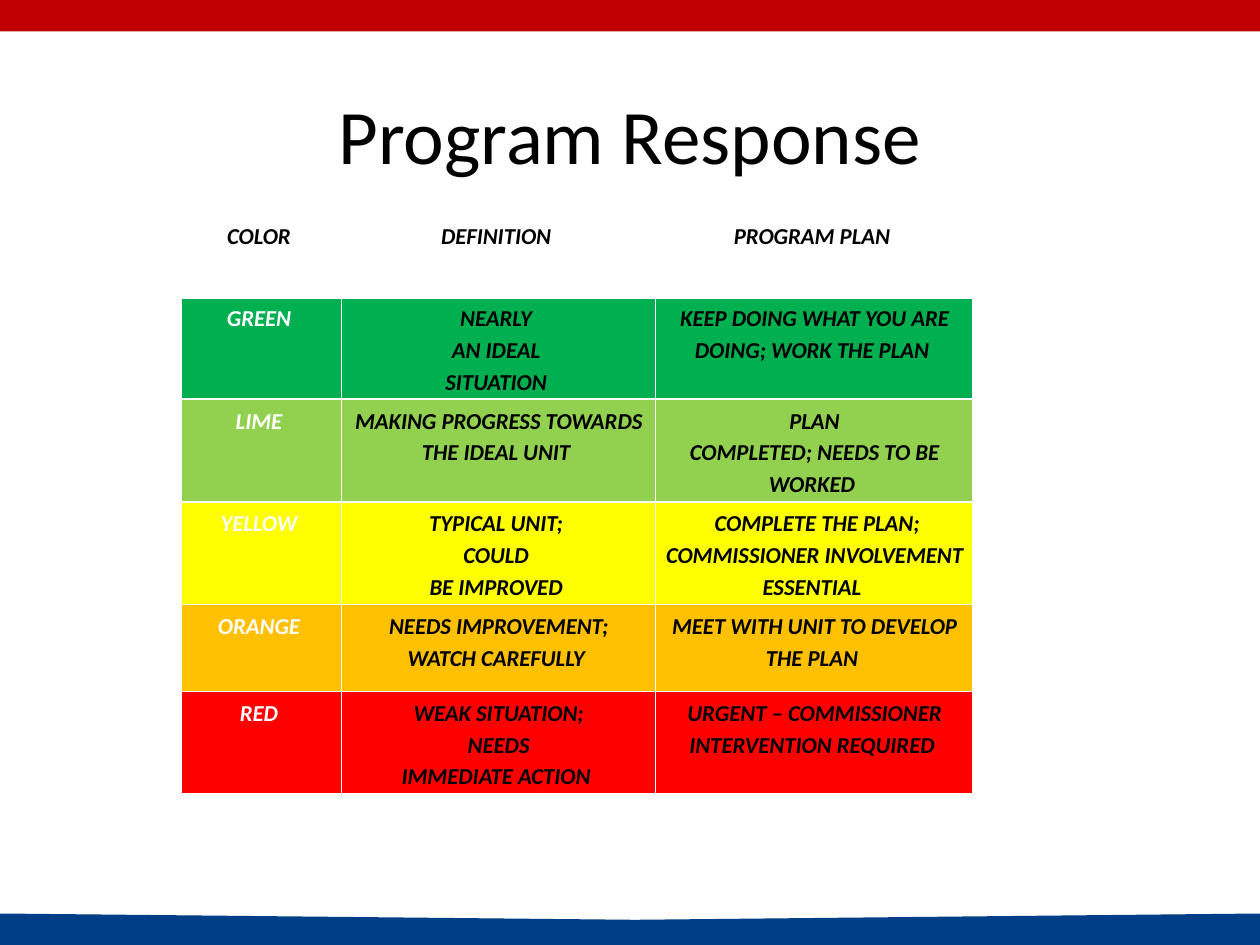
from lxml.etree import SubElement
from pptx import Presentation
from pptx.dml.color import RGBColor
from pptx.enum.shapes import MSO_SHAPE as SHAPE
from pptx.enum.text import MSO_ANCHOR as ANCHOR, PP_ALIGN as ALIGN
from pptx.oxml.ns import qn
from pptx.util import Pt

TITLE = "Program Response"
# Row fill, first-column text colour, cells; "\n" starts a new paragraph
ROWS = [
    ("white", "black", ["COLOR ", "DEFINITION ", "PROGRAM PLAN "]),
    ("green", "white", ["GREEN ", "NEARLY \nAN IDEAL \nSITUATION ",
                        "KEEP DOING WHAT YOU ARE DOING; WORK THE PLAN "]),
    ("lime", "white", ["LIME ", "MAKING PROGRESS TOWARDS\nTHE IDEAL UNIT ",
                       "PLAN\nCOMPLETED; NEEDS TO BE WORKED "]),
    ("yellow", "white", ["YELLOW ", "TYPICAL UNIT; \nCOULD \nBE IMPROVED ",
                         " COMPLETE THE PLAN; COMMISSIONER INVOLVEMENT ESSENTIAL "]),
    ("orange", "white", ["ORANGE ", "NEEDS IMPROVEMENT;\nWATCH CAREFULLY ",
                         "MEET WITH UNIT TO DEVELOP THE PLAN "]),
    ("red", "white", ["RED ", "WEAK SITUATION;\nNEEDS\nIMMEDIATE ACTION ",
                      "URGENT – COMMISSIONER INTERVENTION REQUIRED "]),
]
COLORS = {
    "white": "FFFFFF", "black": "000000", "band": "C00000", "wave": "003F87",
    "green": "00B050", "lime": "92D050", "yellow": "FFFF00",
    "orange": "FFC000", "red": "FF0000",
}
W, H, BAND = 720, 540, 18
COL_WIDTHS = [91.5, 179.5, 181.5]
ROW_HEIGHTS = [47, 57, 57, 57, 49.7, 57]


def rgb(name):
    return RGBColor.from_string(COLORS[name])


def write(tf, text, size=13, color="black", bold=False, italic=False, spacing=None):
    tf.word_wrap = True
    for i, line in enumerate(text.split("\n")):
        p = tf.add_paragraph() if i else tf.paragraphs[0]
        p.alignment = ALIGN.CENTER
        p.line_spacing = spacing
        r = p.add_run()
        r.text = line
        r.font.name, r.font.size = "Calibri", Pt(size)
        r.font.bold, r.font.italic = bold, italic
        r.font.color.rgb = rgb(color)


def paint(sp, color):
    sp.shadow.inherit = False
    sp.fill.solid()
    sp.fill.fore_color.rgb = rgb(color)
    sp.line.fill.background()


def set_borders(cell, bottom=1):
    tc_pr = cell._tc.get_or_add_tcPr()
    widths = {"lnL": 1, "lnR": 1, "lnT": 1, "lnB": bottom}
    for i, (side, width) in enumerate(widths.items()):
        ln = SubElement(tc_pr, qn(f"a:{side}"), w=str(Pt(width)))
        fill = SubElement(ln, qn("a:solidFill"))
        SubElement(fill, qn("a:srgbClr"), val=COLORS["white"])
        tc_pr.insert(i, ln)  # borders come before the fill


prs = Presentation()
prs.slide_width, prs.slide_height = Pt(W), Pt(H)
s = prs.slides.add_slide(prs.slide_layouts[6])

# Top band and dipped bottom band
paint(s.shapes.add_shape(SHAPE.RECTANGLE, 0, 0, Pt(W), Pt(BAND)), "band")
fb = s.shapes.build_freeform(0, Pt(H - BAND))
fb.add_line_segments([(Pt(x), Pt(y)) for x, y in
                      [(363, 525.6), (W, H - BAND), (W, H), (0, H)]], close=True)
paint(fb.convert_to_shape(), "wave")

# Title
tf = s.shapes.add_textbox(Pt(36), Pt(41.8), Pt(648), Pt(69.8)).text_frame
tf.vertical_anchor = ANCHOR.MIDDLE
write(tf, TITLE, size=44)

# Response table
table = s.shapes.add_table(len(ROWS), len(COL_WIDTHS), Pt(103.7), Pt(122.5),
                           Pt(sum(COL_WIDTHS)), Pt(sum(ROW_HEIGHTS))).table
table.horz_banding = False
for col, width in zip(table.columns, COL_WIDTHS):
    col.width = Pt(width)
for i, (fill, label_color, texts) in enumerate(ROWS):
    table.rows[i].height = Pt(ROW_HEIGHTS[i])
    for j, text in enumerate(texts):
        cell = table.cell(i, j)
        cell.margin_left = cell.margin_right = Pt(5)
        cell.margin_top = cell.margin_bottom = Pt(2.4)
        cell.fill.solid()
        cell.fill.fore_color.rgb = rgb(fill)
        set_borders(cell, bottom=1 if i else 3)
        write(cell.text_frame, text, color="black" if j else label_color,
              bold=True, italic=True, spacing=1.15)

prs.save("out.pptx")
